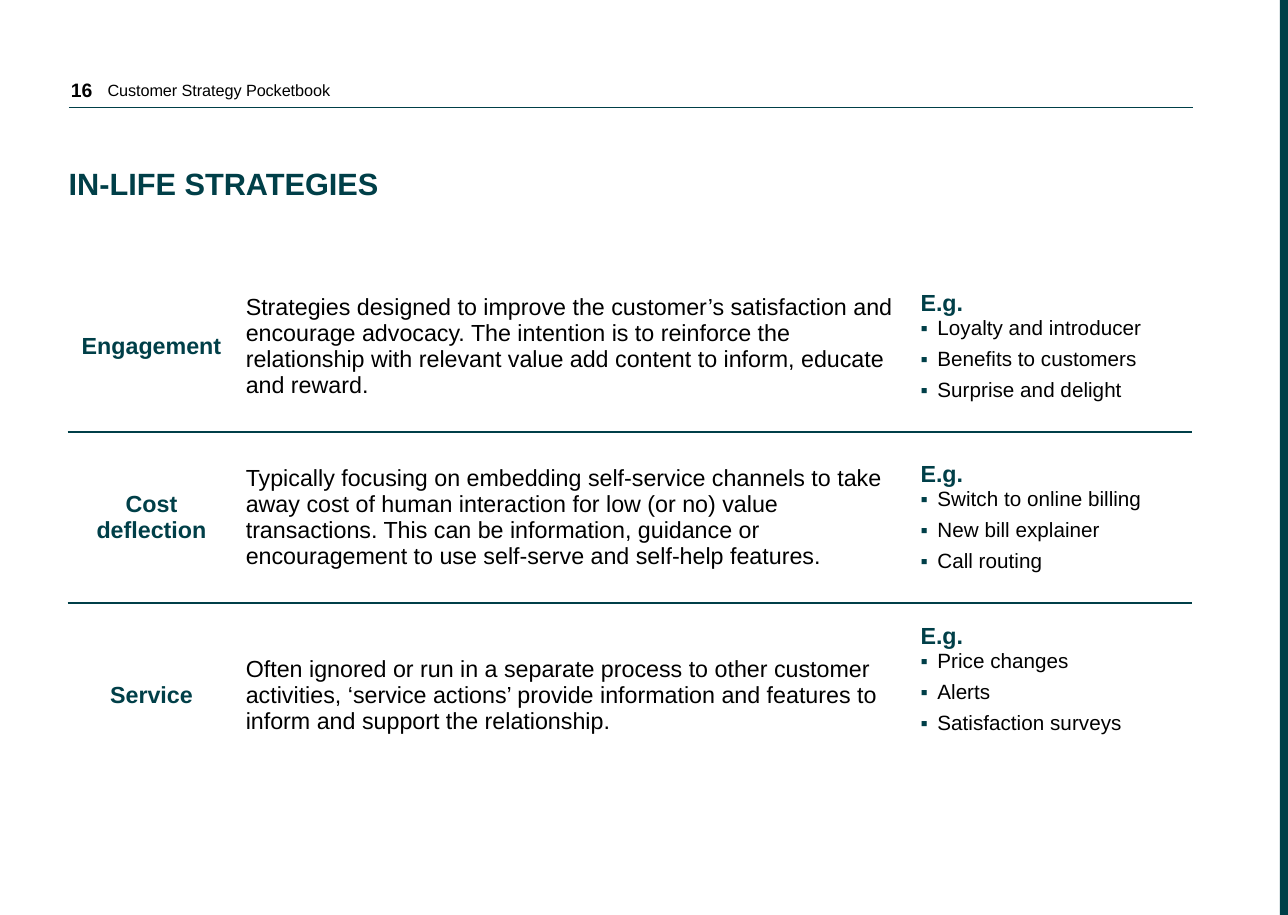
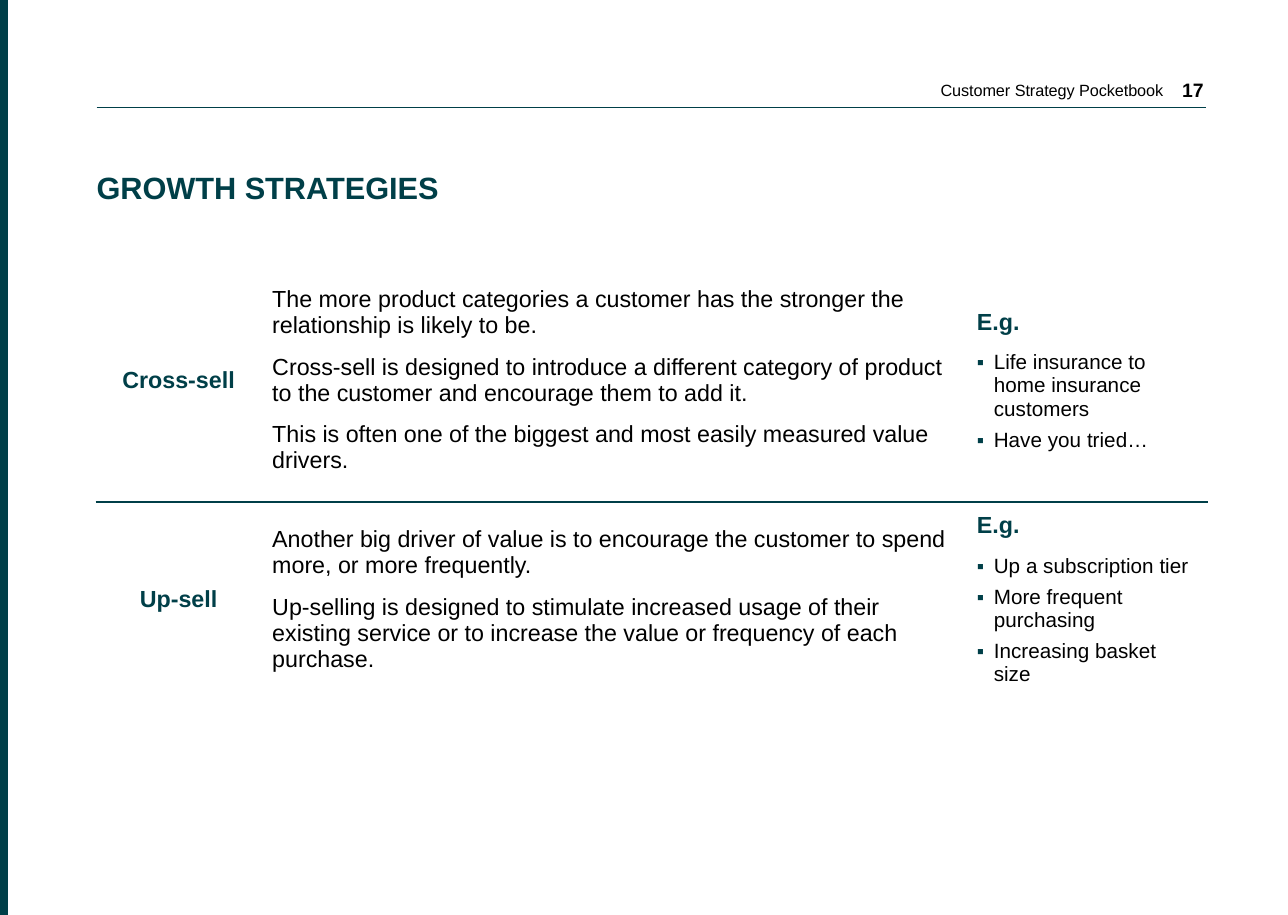
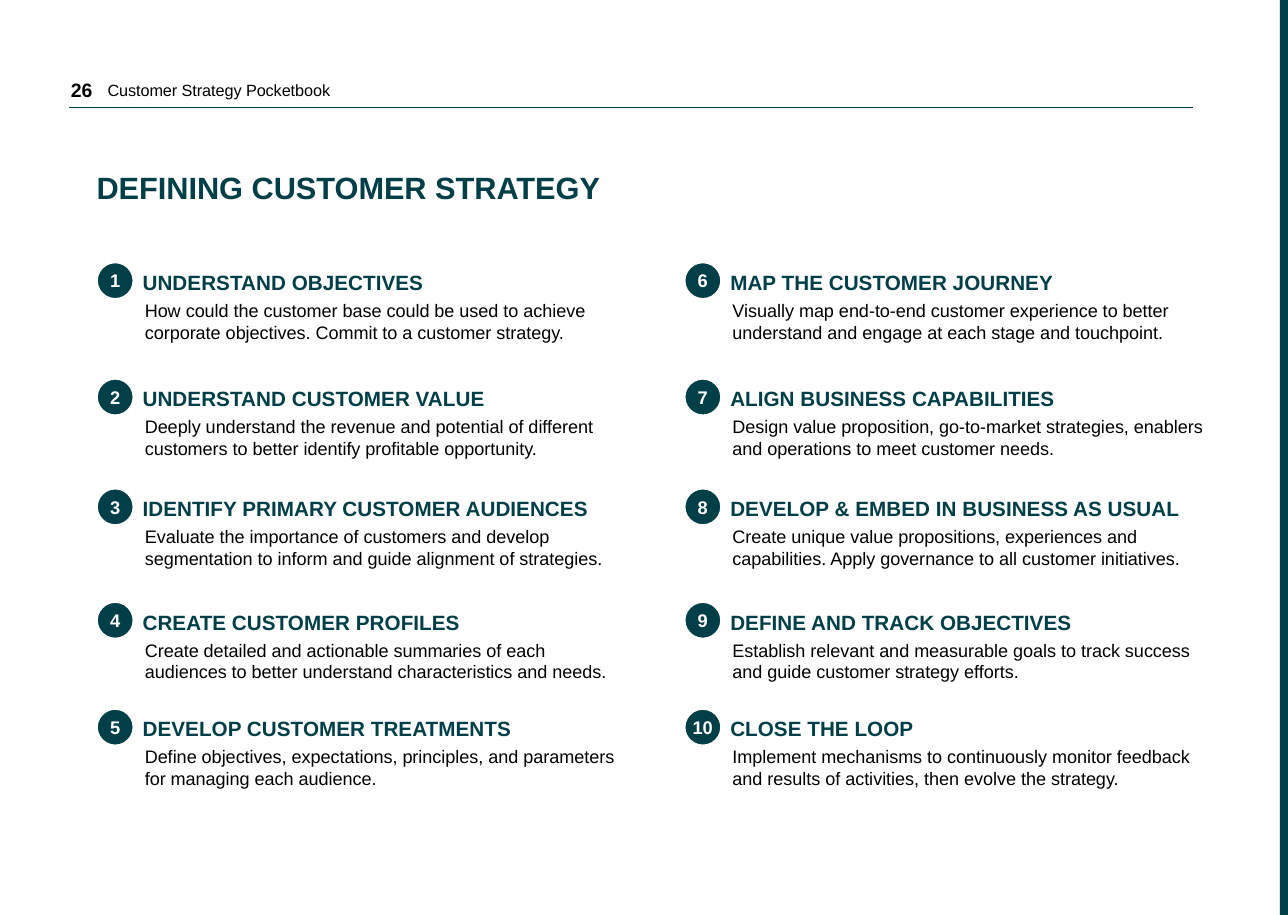
import pptx
import pptx.dml.color
import pptx.enum.shapes
import pptx.enum.text
import pptx.oxml.ns
import pptx.util
from lxml import etree

Cm = pptx.util.Cm
Pt = pptx.util.Pt
qn = pptx.oxml.ns.qn
Align = pptx.enum.text.PP_ALIGN
Anchor = pptx.enum.text.MSO_ANCHOR
Shape = pptx.enum.shapes.MSO_SHAPE

TEAL, BLACK, WHITE = "003F48", "000000", "FFFFFF"
FONT = "Arial"
WIDTH, HEIGHT = 17.6, 12.5
BAND = 0.11
NO_GRID = "{2D5ABB26-0587-4C30-8999-92F81FD0307C}"
CELL_INSETS = (0.16, 0.08, 0.16, 0.08)


def color(value):
    return pptx.dml.color.RGBColor.from_string(value)


def add_solid(parent, value):
    fill = etree.SubElement(parent, qn("a:solidFill"))
    etree.SubElement(fill, qn("a:srgbClr"), val=value)


def set_insets(target, insets):
    target.margin_left, target.margin_top, target.margin_right, target.margin_bottom = map(Cm, insets)


def style(para, size, ink=BLACK, bold=False, align=Align.LEFT, after=0):
    para.alignment = align
    para.space_after = Pt(after)
    for span in para.runs:
        span.font.name = FONT
        span.font.size = Pt(size)
        span.font.bold = bold
        span.font.color.rgb = color(ink)


def add_bullet(para):
    properties = para._p.get_or_add_pPr()
    properties.set("marL", str(Cm(0.23)))
    properties.set("indent", str(-Cm(0.23)))
    bullet_color = etree.SubElement(properties, qn("a:buClr"))
    etree.SubElement(bullet_color, qn("a:srgbClr"), val=TEAL)
    etree.SubElement(properties, qn("a:buFont"), typeface=FONT)
    etree.SubElement(properties, qn("a:buChar"), char="▪")


def add_borders(cell, top, bottom):
    properties = cell._tc.get_or_add_tcPr()
    sides = (("a:lnL", WHITE), ("a:lnR", WHITE), ("a:lnT", top), ("a:lnB", bottom))
    for position, (tag, ink) in enumerate(sides):
        line = etree.Element(qn(tag), w=str(Pt(0.75 if ink == TEAL else 1)))
        add_solid(line, ink)
        properties.insert(position, line)


class Pocketbook:
    def __init__(self):
        self.deck = pptx.Presentation()
        self.deck.slide_width = Cm(WIDTH)
        self.deck.slide_height = Cm(HEIGHT)
        self.page = None

    def add_page(self, number, title, title_left, title_top):
        self.page = self.deck.slides.add_slide(self.deck.slide_layouts[6])
        if number % 2:
            band_left, rule, align = 0, (1.32, 16.48), Align.RIGHT
            number_left, name_left = 15.77, 9.22
        else:
            band_left, rule, align = WIDTH - BAND, (0.94, 16.3), Align.LEFT
            number_left, name_left = 0.81, 1.22
        self.add_shape(Shape.RECTANGLE, band_left, 0, BAND, HEIGHT)
        self.add_rule(*rule, 1.47)
        self.add_text(str(number), number_left, 0.92, 0.84, 0.61, 7.5,
                      bold=True, align=align, insets=CELL_INSETS)
        self.add_text("Customer Strategy Pocketbook", name_left, 0.97, 6.93, 0.53, 6.3,
                      align=align, insets=(0.25, 0.13, 0.25, 0.13))
        heading = self.add_text(title, title_left, title_top, 11.2, 0.76, 11.9, TEAL, True,
                                insets=(0, 0.08, 0.16, 0.08))
        heading.text_frame.paragraphs[0].line_spacing = 0.9

    def add_text(self, text, left, top, width, height, size, ink=BLACK, bold=False,
                 align=Align.LEFT, anchor=Anchor.MIDDLE, insets=(0, 0, 0, 0)):
        box = self.page.shapes.add_textbox(Cm(left), Cm(top), Cm(width), Cm(height))
        frame = box.text_frame
        frame.word_wrap = True
        frame.vertical_anchor = anchor
        set_insets(frame, insets)
        frame.text = text
        style(frame.paragraphs[0], size, ink, bold, align)
        return box

    def add_shape(self, kind, left, top, width, height):
        shape = self.page.shapes.add_shape(kind, Cm(left), Cm(top), Cm(width), Cm(height))
        shape.shadow.inherit = False
        shape.fill.solid()
        shape.fill.fore_color.rgb = color(TEAL)
        shape.line.fill.background()
        return shape

    def add_rule(self, left, right, top):
        rule = self.page.shapes.add_connector(
            pptx.enum.shapes.MSO_CONNECTOR.STRAIGHT, Cm(left), Cm(top), Cm(right), Cm(top))
        rule.line.color.rgb = color(TEAL)
        rule.line.width = Pt(0.5)
        etree.SubElement(rule._element.spPr, qn("a:effectLst"))

    def add_badge(self, text, left, top, size):
        badge = self.add_shape(Shape.OVAL, left, top, size, size)
        badge.line.color.rgb = color(WHITE)
        badge.line.width = Pt(1)
        frame = badge.text_frame
        frame.vertical_anchor = Anchor.MIDDLE
        set_insets(frame, (0, 0.05, 0, 0.05))
        frame.text = text
        style(frame.paragraphs[0], 7.1, WHITE, True, Align.CENTER)

    def add_step(self, number, title, text, left, top):
        self.add_text(title, left + 0.38, top + 0.07, 6.76, 0.41, 8, TEAL, True,
                      insets=(0.25, 0, 0, 0))
        self.add_badge(str(number), left, top, 0.51)
        self.add_text(text, left + 0.66, top + 0.51, 6.58, 0.61, 7, anchor=Anchor.TOP)

    def add_strategies(self, left, top, widths, heights, strategies, after=0, last_bottom=0.08):
        frame = self.page.shapes.add_table(
            len(heights), len(widths), Cm(left), Cm(top), Cm(sum(widths)), Cm(sum(heights)))
        table = frame.table
        table.first_row = table.horz_banding = False
        table._tbl.tblPr.find(qn("a:tableStyleId")).text = NO_GRID
        for column, width in zip(table.columns, widths):
            column.width = Cm(width)
        last = len(heights) - 1
        for index, (name, description, examples) in enumerate(strategies):
            table.rows[index].height = Cm(heights[index])
            cells = table.rows[index].cells
            for cell, lines in zip(cells, ([name], description, ["E.g."] + examples)):
                cell.text = "\n".join(lines)
                cell.vertical_anchor = Anchor.MIDDLE
                set_insets(cell, CELL_INSETS)
                cell.fill.background()
                add_borders(cell, TEAL if index else WHITE, WHITE if index == last else TEAL)
            style(cells[0].text_frame.paragraphs[0], 9, TEAL, True, Align.CENTER, after)
            for para in cells[1].text_frame.paragraphs:
                style(para, 9, after=after)
            lead, *items = cells[2].text_frame.paragraphs
            style(lead, 9, TEAL, True, after=after)
            for para in items:
                style(para, 8, after=3)
                add_bullet(para)
        table.cell(last, 2).margin_bottom = Cm(last_bottom)


IN_LIFE = [
    ("Engagement",
     ["Strategies designed to improve the customer’s satisfaction and encourage advocacy. "
      "The intention is to reinforce the relationship with relevant value add content to "
      "inform, educate and reward."],
     ["Loyalty and introducer", "Benefits to customers", "Surprise and delight"]),
    ("Cost deflection",
     ["Typically focusing on embedding self-service channels to take away cost of human "
      "interaction for low (or no) value transactions. This can be information, guidance or "
      "encouragement to use self-serve and self-help features."],
     ["Switch to online billing", "New bill explainer", "Call routing"]),
    ("Service",
     ["Often ignored or run in a separate process to other customer activities, ‘service "
      "actions’ provide information and features to inform and support the relationship."],
     ["Price changes", "Alerts", "Satisfaction surveys"]),
]

GROWTH = [
    ("Cross-sell",
     ["The more product categories a customer has the stronger the relationship is likely to be.",
      "Cross-sell is designed to introduce a different category of product to the customer "
      "and encourage them to add it.",
      "This is often one of the biggest and most easily measured value drivers."],
     ["Life insurance to home insurance customers", "Have you tried…"]),
    ("Up-sell",
     ["Another big driver of value is to encourage the customer to spend more, or more frequently.",
      "Up-selling is designed to stimulate increased usage of their existing service or to "
      "increase the value or frequency of each purchase."],
     ["Up a subscription tier", "More frequent purchasing", "Increasing basket size"]),
]

STEPS = [
    ("UNDERSTAND OBJECTIVES",
     "How could the customer base could be used to achieve corporate objectives. "
     "Commit to a customer strategy."),
    ("UNDERSTAND CUSTOMER VALUE",
     "Deeply understand the revenue and potential of different customers to better identify "
     "profitable opportunity."),
    ("IDENTIFY PRIMARY CUSTOMER AUDIENCES",
     "Evaluate the importance of customers and develop segmentation to inform and guide "
     "alignment of strategies."),
    ("CREATE CUSTOMER PROFILES",
     "Create detailed and actionable summaries of each audiences to better understand "
     "characteristics and needs."),
    ("DEVELOP CUSTOMER TREATMENTS",
     "Define objectives, expectations, principles, and parameters for managing each audience."),
    ("MAP THE CUSTOMER JOURNEY",
     "Visually map end-to-end customer experience to better understand and engage at each "
     "stage and touchpoint."),
    ("ALIGN BUSINESS CAPABILITIES",
     "Design value proposition, go-to-market strategies, enablers and operations to meet "
     "customer needs."),
    ("DEVELOP & EMBED IN BUSINESS AS USUAL",
     "Create unique value propositions, experiences and capabilities. Apply governance to all "
     "customer initiatives."),
    ("DEFINE AND TRACK OBJECTIVES",
     "Establish relevant and measurable goals to track success and guide customer strategy "
     "efforts."),
    ("CLOSE THE LOOP",
     "Implement mechanisms to continuously monitor feedback and results of activities, then "
     "evolve the strategy."),
]
STEP_LEFTS = (1.32, 9.35)
STEP_TOPS = (3.58, 5.17, 6.67, 8.22, 9.68)


def main():
    book = Pocketbook()

    book.add_page(16, "IN-LIFE STRATEGIES", 0.94, 2.16)
    book.add_strategies(0.94, 3.56, (2.26, 9.22, 3.86), (2.34, 2.34, 2.51), IN_LIFE,
                        last_bottom=0.52)

    book.add_page(17, "GROWTH STRATEGIES", 1.32, 2.21)
    book.add_strategies(1.32, 3.53, (2.24, 9.63, 3.3), (3.33, 2.51), GROWTH, after=6)

    book.add_page(26, "DEFINING CUSTOMER STRATEGY", 1.32, 2.21)
    for index, (title, text) in enumerate(STEPS):
        column, row = divmod(index, len(STEP_TOPS))
        book.add_step(index + 1, title, text, STEP_LEFTS[column], STEP_TOPS[row])

    book.deck.save("out.pptx")


if __name__ == "__main__":
    main()
